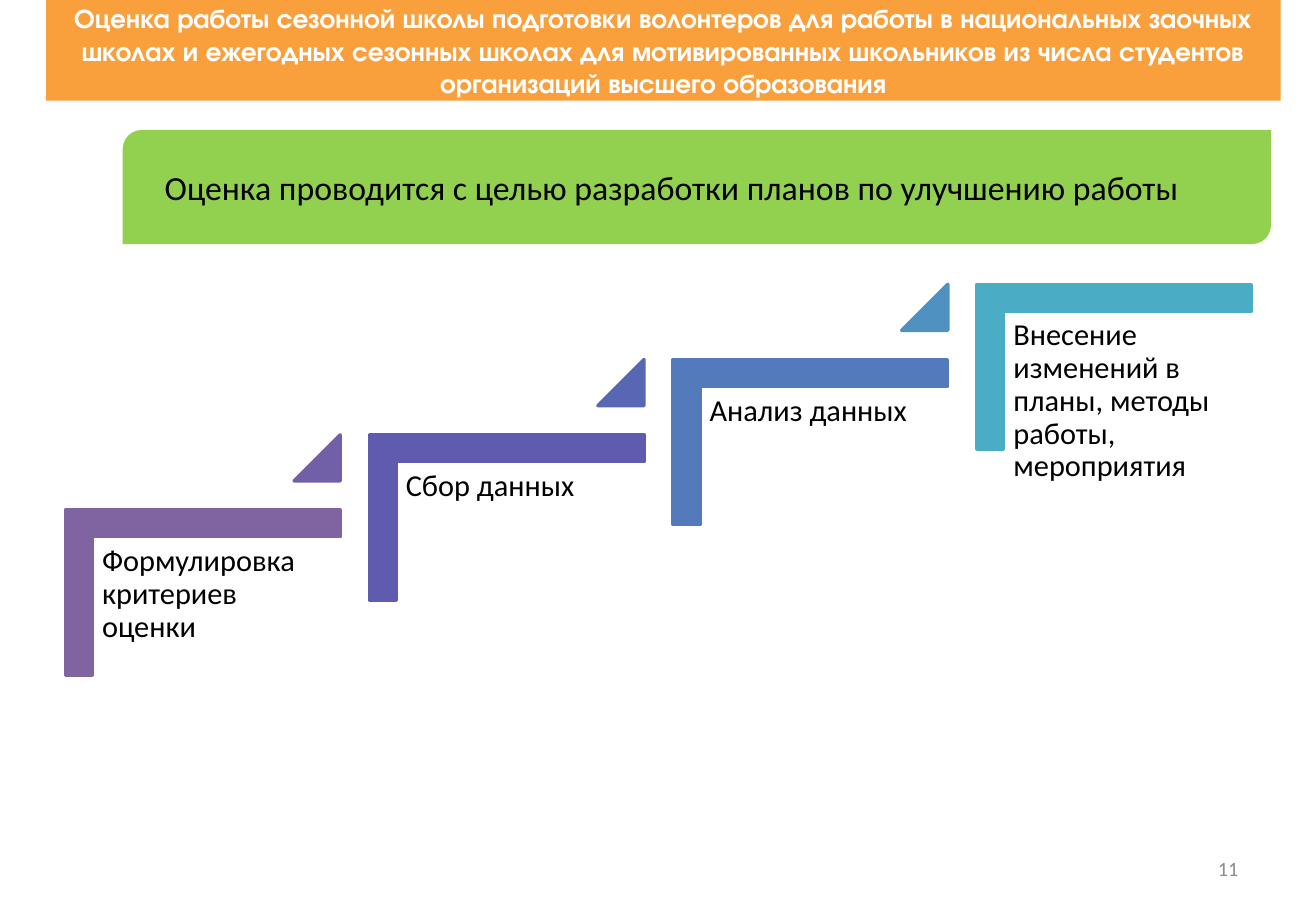
from pptx import Presentation
from pptx.dml.color import RGBColor
from pptx.enum.shapes import MSO_SHAPE as Shape
from pptx.enum.text import MSO_ANCHOR as Anchor, PP_ALIGN as Align
from pptx.util import Inches, Pt

WHITE = RGBColor(0xFF, 0xFF, 0xFF)
BLACK = RGBColor(0x00, 0x00, 0x00)
GRAY = RGBColor(0x8C, 0x8C, 0x8C)
ORANGE = RGBColor(0xF9, 0x9F, 0x3C)
GREEN = RGBColor(0x92, 0xD0, 0x50)
PURPLE = RGBColor(0x80, 0x64, 0xA2)
VIOLET = RGBColor(0x71, 0x60, 0xA8)
INDIGO = RGBColor(0x5F, 0x5B, 0xAE)
COBALT = RGBColor(0x57, 0x67, 0xB4)
BLUE = RGBColor(0x53, 0x7A, 0xBA)
AZURE = RGBColor(0x4F, 0x91, 0xC0)
TEAL = RGBColor(0x4B, 0xAC, 0xC6)

TITLE = ("Оценка работы сезонной школы подготовки волонтеров для работы в "
         "национальных заочных школах и ежегодных сезонных школах для "
         "мотивированных школьников из числа студентов организаций высшего "
         "образования")
GOAL = "Оценка проводится с целью разработки планов по улучшению работы"

# Each step: text, bracket colour, colour of the triangle leading to the next step
STEPS = [
    ("Формулировка критериев оценки", PURPLE, VIOLET),
    ("Сбор данных", INDIGO, COBALT),
    ("Анализ данных", BLUE, AZURE),
    ("Внесение изменений в планы, методы работы, мероприятия", TEAL, None),
]
STEP_WIDTH, STEP_HEIGHT = 2.26, 1.36
STEP_PITCH, STEP_RISE = 2.5, 0.62
BRACKET_THICKNESS = 0.22
TRIANGLE_SIZE = 0.38


def paint(shape, color, outlined=False):
    shape.shadow.inherit = False
    shape.fill.solid()
    shape.fill.fore_color.rgb = color
    if outlined:
        shape.line.color.rgb = color
        shape.line.width = Pt(2)
    else:
        shape.line.fill.background()


def add_filled(page, kind, left, top, width, height, color, outlined=False):
    shape = page.shapes.add_shape(
        kind, Inches(left), Inches(top), Inches(width), Inches(height))
    paint(shape, color, outlined)
    return shape


def write(box, text, size, color, align=Align.LEFT, anchor=Anchor.MIDDLE,
          font="Calibri", bold=False):
    """Fill the box with one wrapped paragraph and return that paragraph."""
    frame = box.text_frame
    frame.word_wrap = True
    frame.vertical_anchor = anchor
    para = frame.paragraphs[0]
    para.text = text
    para.alignment = align
    para.font.name = font
    para.font.size = Pt(size)
    para.font.bold = bold
    para.font.color.rgb = color
    return para


def add_title(page, left, top, width, height):
    bar = add_filled(page, Shape.RECTANGLE, left, top, width, height, ORANGE)
    write(bar, TITLE, 16, WHITE, Align.CENTER, font="TeX Gyre Adventor", bold=True)


def add_goal(page, left, top, width, height):
    banner = add_filled(page, Shape.ROUND_2_DIAG_RECTANGLE,
                        left, top, width, height, GREEN)
    banner.text_frame.margin_left = Inches(0.3)
    write(banner, GOAL, 20, BLACK)


def add_bracket(page, left, top, color):
    """Draw a step's outline: a bar along the top and one down the left."""
    right, bottom = left + STEP_WIDTH, top + STEP_HEIGHT
    inner_left, inner_top = left + BRACKET_THICKNESS, top + BRACKET_THICKNESS
    corners = [(right, top), (right, inner_top), (inner_left, inner_top),
               (inner_left, bottom), (left, bottom)]
    builder = page.shapes.build_freeform(Inches(left), Inches(top))
    builder.add_line_segments([(Inches(x), Inches(y)) for x, y in corners])
    paint(builder.convert_to_shape(), color, outlined=True)


def add_step(page, left, top, text, color, triangle_color):
    add_bracket(page, left, top, color)

    label = page.shapes.add_textbox(Inches(left + 0.23), Inches(top + 0.22),
                                    Inches(2.04), Inches(1.79))
    frame = label.text_frame
    frame.margin_left = frame.margin_right = Inches(0.07)
    frame.margin_top = frame.margin_bottom = Inches(0.07)
    write(label, text, 18, BLACK, anchor=Anchor.TOP).line_spacing = 0.9

    if triangle_color is not None:
        triangle = add_filled(page, Shape.ISOSCELES_TRIANGLE,
                              left + STEP_WIDTH - TRIANGLE_SIZE, top - STEP_RISE,
                              TRIANGLE_SIZE, TRIANGLE_SIZE, triangle_color,
                              outlined=True)
        triangle.adjustments[0] = 1


def add_staircase(page, left, top):
    """Place the steps rising to the right from the lowest one at left, top."""
    for index, step in enumerate(STEPS):
        add_step(page, left + index * STEP_PITCH, top - index * STEP_RISE, *step)


def add_page_number(page, left, top, width, height):
    box = page.shapes.add_textbox(
        Inches(left), Inches(top), Inches(width), Inches(height))
    write(box, "11", 12, GRAY, Align.RIGHT)


def main():
    deck = Presentation()
    deck.slide_width, deck.slide_height = Inches(10.83), Inches(7.5)
    page = deck.slides.add_slide(deck.slide_layouts[6])
    add_title(page, 0.38, 0, 10.16, 0.83)
    add_page_number(page, 7.76, 6.95, 2.53, 0.4)
    add_staircase(page, 0.54, 4.2)
    add_goal(page, 1.01, 1.07, 9.45, 0.94)
    deck.save("out.pptx")


if __name__ == "__main__":
    main()
